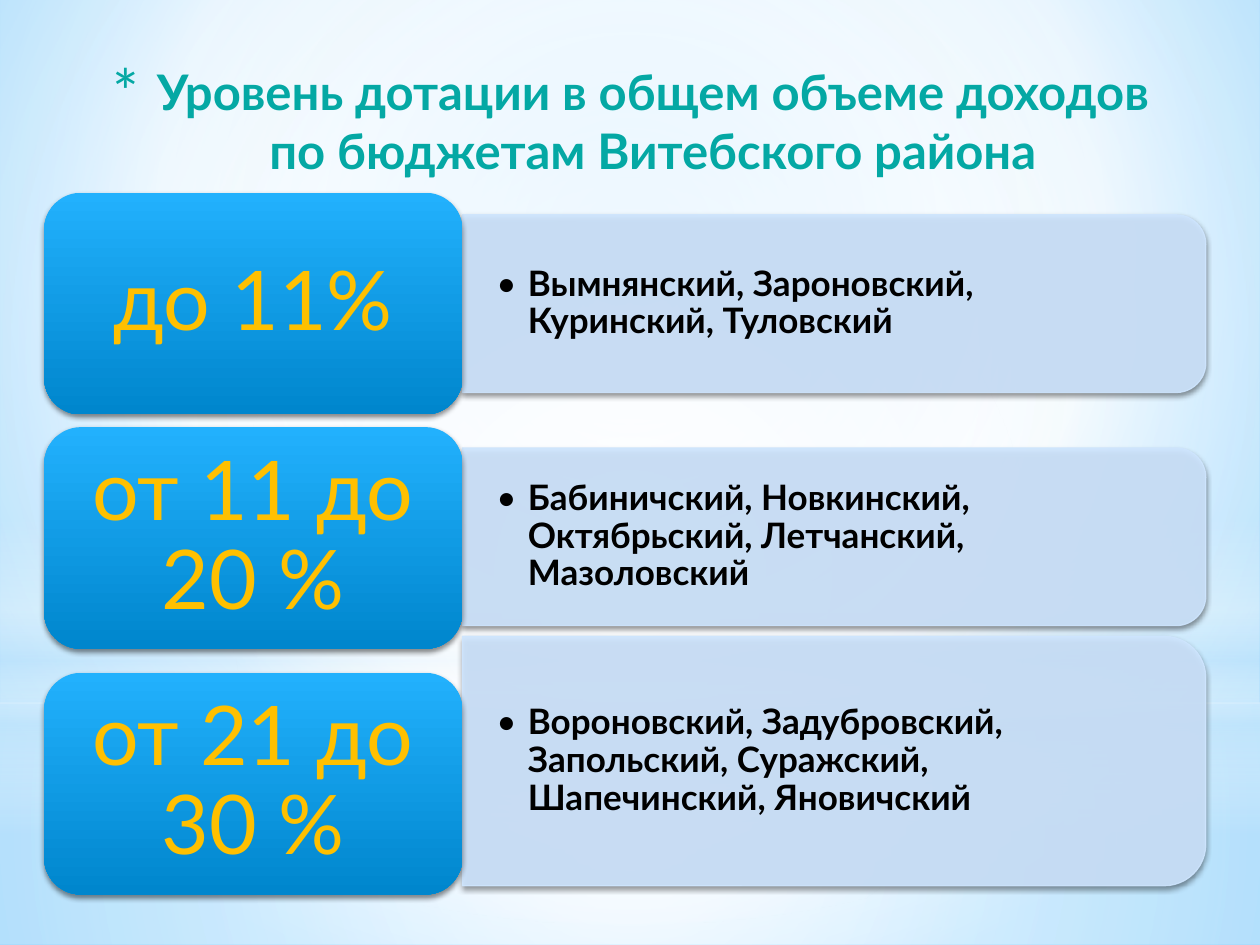
from dataclasses import dataclass

from lxml import etree
from pptx import Presentation
from pptx import util as u
from pptx.dml.color import RGBColor
from pptx.enum import shapes, text
from pptx.oxml.ns import qn


@dataclass(frozen=True)
class Theme:
    font: str = "Lato"
    title: str = "04A8A4"
    label: str = "FFC000"
    body: str = "000000"
    panel: str = "CEE5FE"
    shadow: str = "000000"
    label_fill: tuple = ((0, "22B1FD", 100), (100, "0086CD", 100))
    title_size: int = 28
    label_size: int = 47
    body_size: int = 20


THEME = Theme()
CENTRE = (50, 50, 50, 50)
BACKGROUND = ((0, "B0E0FF", 100), (60, "FFFFFF", 100), (100, "6BC5FF", 100))

# Background layers: shape, top, height, gradient stops, radial focus or None
LAYERS = (
    ("RECTANGLE", 5.58, 1.92,
     ((0, "FFFFFF", 91), (37, "FFFFFF", 76), (100, "C6E7FC", 79)), CENTRE),
    ("RECTANGLE", 0, 5.58,
     ((0, "FFFFFF", 89), (48, "FFFFFF", 62), (100, "C6E7FC", 79)), CENTRE),
    ("RECTANGLE", 4.12, 2.5,
     ((0, "FFFFFF", 0), (29, "FFFFFF", 30), (45, "C6E7FC", 40),
      (55, "FFFFFF", 26), (65, "C6E7FC", 60), (100, "FFFFFF", 0)), None),
    ("OVAL", 1.75, 5.58, ((0, "FFFFFF", 100), (56, "FFFFFF", 0)), CENTRE),
)

# Rows: label, label top, panel middle, panel height, districts
ROWS = (
    ("до 11%", 1.53, 2.41, 1.41,
     "Вымнянский, Зароновский, Куринский, Туловский"),
    ("от 11 до 20 %", 3.39, 4.26, 1.41,
     "Бабиничский, Новкинский, Октябрьский, Летчанский, Мазоловский"),
    ("от 21 до 30 %", 5.34, 6.04, 1.98,
     "Вороновский, Задубровский, Запольский, Суражский, "
     "Шапечинский, Яновичский"),
)
LABEL_LEFT, LABEL_WIDTH, LABEL_HEIGHT = 0.35, 3.32, 1.76
PANEL_LEFT, PANEL_WIDTH = 3.67, 5.9


def sub(parent, tag, **attributes):
    values = {key: str(value) for key, value in attributes.items()}
    return etree.SubElement(parent, qn(tag), values)


def add_colour(parent, colour, opacity):
    node = sub(parent, "a:srgbClr", val=colour)
    if opacity < 100:
        sub(node, "a:alpha", val=opacity * 1000)


def set_gradient(solid, stops, focus=None):
    """Replace a solid fill element with a radial or a vertical gradient."""
    gradient = etree.Element(qn("a:gradFill"), rotWithShape="1")
    stop_list = sub(gradient, "a:gsLst")
    for position, colour, opacity in stops:
        add_colour(sub(stop_list, "a:gs", pos=position * 1000), colour, opacity)
    if focus:
        radial = sub(gradient, "a:path", path="circle")
        sides = {side: share * 1000 for side, share in zip("ltrb", focus)}
        sub(radial, "a:fillToRect", **sides)
    else:
        sub(gradient, "a:lin", ang=90 * 60000, scaled=0)
    solid.getparent().replace(solid, gradient)


def add_shape(page, kind, left, top, width, height):
    shape = page.shapes.add_shape(
        getattr(shapes.MSO_SHAPE, kind),
        *map(u.Inches, (left, top, width, height)))
    shape.shadow.inherit = False
    shape.fill.solid()
    shape.fill.fore_color.rgb = RGBColor.from_string(THEME.panel)
    shape.line.fill.background()
    return shape


def solid_fill(shape):
    return shape.element.spPr.find(qn("a:solidFill"))


def add_shadow(shape):
    effects = shape.element.spPr.find(qn("a:effectLst"))
    shadow = sub(effects, "a:outerShdw", blurRad=u.Pt(3.1), dist=u.Pt(1.8),
                 dir=90 * 60000, rotWithShape=0)
    add_colour(shadow, THEME.shadow, 45)


def set_frame(shape, insets, anchor):
    frame = shape.text_frame
    frame.word_wrap = True
    frame.vertical_anchor = anchor
    (frame.margin_left, frame.margin_top,
     frame.margin_right, frame.margin_bottom) = map(u.Inches, insets)
    return frame.paragraphs[0]


def add_run(para, wording, size, colour, bold=False):
    span = para.add_run()
    span.text = wording
    span.font.name = THEME.font
    span.font.size = u.Pt(size)
    span.font.bold = bold
    span.font.color.rgb = RGBColor.from_string(colour)


def set_bullet(para, mark, indent, colour, percent=100):
    properties = para._p.get_or_add_pPr()
    properties.set("marL", str(u.Inches(indent)))
    properties.set("indent", str(u.Inches(-indent)))
    add_colour(sub(properties, "a:buClr"), colour, 100)
    sub(properties, "a:buSzPct", val=percent * 1000)
    sub(properties, "a:buFont", typeface=THEME.font)
    sub(properties, "a:buChar", char=mark)


def add_background(page):
    page.background.fill.solid()
    solid = page.element.find(".//" + qn("p:bgPr")).find(qn("a:solidFill"))
    set_gradient(solid, BACKGROUND, (20, 10, 20, 60))
    for kind, top, height, stops, focus in LAYERS:
        layer = add_shape(page, kind, 0, top, 10, height)
        set_gradient(solid_fill(layer), stops, focus)


def add_title(page, *lines):
    box = page.shapes.add_textbox(*map(u.Inches, (0.2, 0.44, 9.61, 0.94)))
    para = set_frame(box, (0.1, 0.05, 0.1, 0.05), text.MSO_ANCHOR.TOP)
    para.alignment = text.PP_ALIGN.CENTER
    set_bullet(para, "*", 0.35, THEME.title, 128)
    for number, line in enumerate(lines):
        if number:
            para.add_line_break()
        add_run(para, line, THEME.title_size, THEME.title, bold=True)


def add_panel(page, middle, height, districts):
    # A quarter turn puts the two rounded corners on the right
    centre = PANEL_LEFT + PANEL_WIDTH / 2
    panel = add_shape(page, "ROUND_2_SAME_RECTANGLE", centre - height / 2,
                      middle - PANEL_WIDTH / 2, height, PANEL_WIDTH)
    panel.rotation = 90
    panel.line.color.rgb = RGBColor.from_string(THEME.panel)
    panel.line.width = u.Pt(0.75)
    for colour in panel.element.spPr.iter(qn("a:srgbClr")):
        sub(colour, "a:alpha", val=90000)
    add_shadow(panel)

    # Upright text over the turned panel
    text_height = height * 0.9
    box = page.shapes.add_textbox(*map(u.Inches, (
        PANEL_LEFT, middle - text_height / 2, PANEL_WIDTH - 0.07, text_height)))
    para = set_frame(box, (0.27, 0.14, 0.27, 0.14), text.MSO_ANCHOR.MIDDLE)
    para.line_spacing = 0.9
    set_bullet(para, "•", 0.25, THEME.body)
    add_run(para, districts, THEME.body_size, THEME.body, bold=True)


def add_label(page, top, wording):
    label = add_shape(page, "ROUNDED_RECTANGLE", LABEL_LEFT, top,
                      LABEL_WIDTH, LABEL_HEIGHT)
    set_gradient(solid_fill(label), THEME.label_fill)
    add_shadow(label)
    para = set_frame(label, (0.2, 0.1, 0.2, 0.1), text.MSO_ANCHOR.MIDDLE)
    para.alignment = text.PP_ALIGN.CENTER
    para.line_spacing = 0.9
    add_run(para, wording, THEME.label_size, THEME.label)


def main():
    deck = Presentation()
    deck.slide_width, deck.slide_height = u.Inches(10), u.Inches(7.5)
    page = deck.slides.add_slide(deck.slide_layouts[6])
    add_background(page)
    add_title(page, "Уровень дотации в общем объеме доходов",
              "по бюджетам Витебского района")
    for wording, top, middle, height, districts in ROWS:
        add_panel(page, middle, height, districts)
        add_label(page, top, wording)
    deck.save("out.pptx")


if __name__ == "__main__":
    main()
